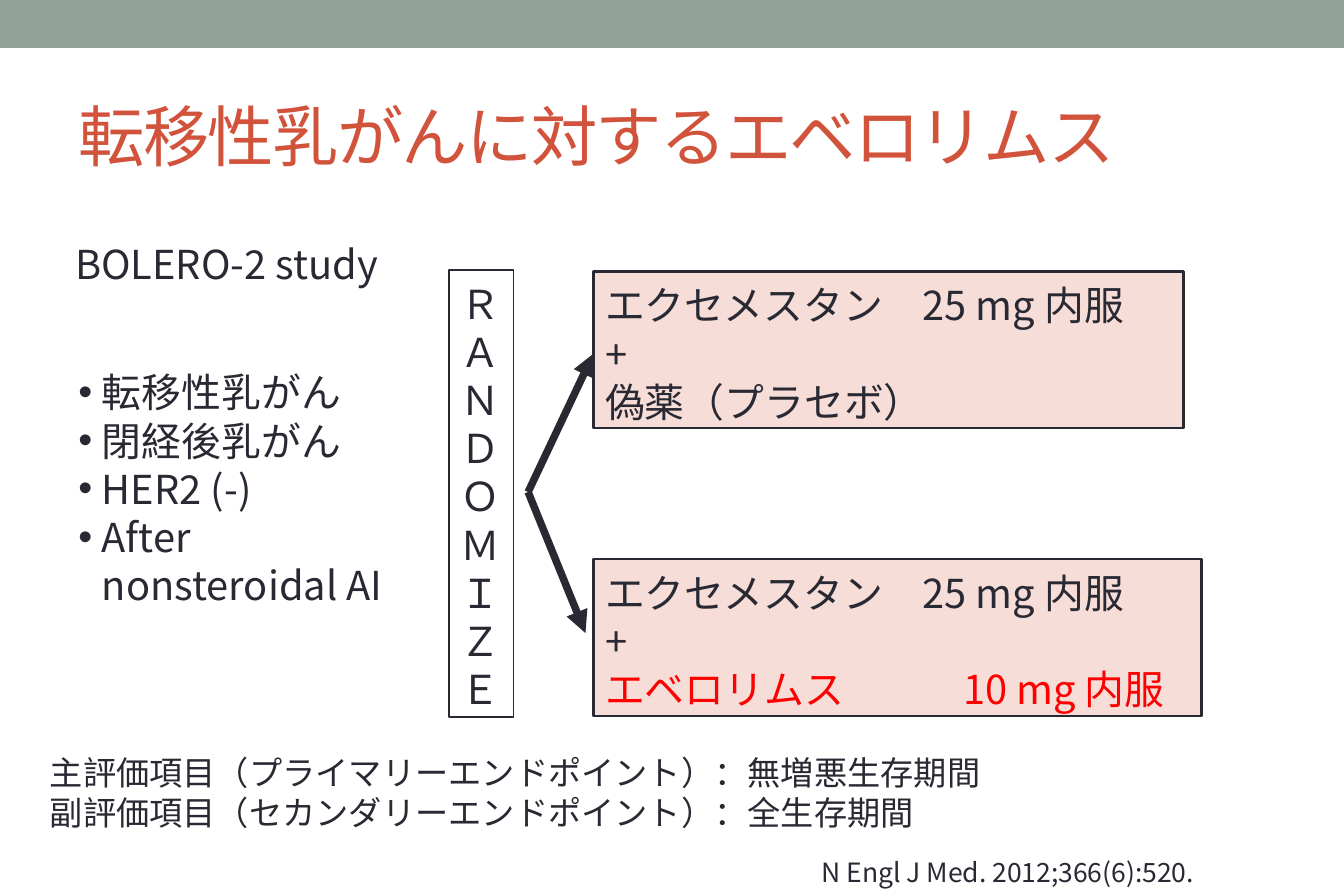
from lxml import etree
from pptx import Presentation
from pptx import util as u
from pptx.dml.color import RGBColor
from pptx.enum import shapes, text
from pptx.oxml.ns import qn

FONT = "Noto Sans CJK JP"
COLORS = {
    "band": "93A299",
    "title": "D2533C",
    "ink": "292934",
    "arm": "F6DDD8",
    "drug": "FF0000",
}


def color(name):
    return RGBColor.from_string(COLORS[name])


def write(shape, lines, size, ink="ink", wrap=True, bullet=False, tab=None):
    frame = shape.text_frame
    frame.word_wrap = wrap
    frame.vertical_anchor = text.MSO_ANCHOR.TOP
    frame.margin_top = u.Cm(0.2)
    for index, line in enumerate(lines):
        paragraph = frame.add_paragraph() if index else frame.paragraphs[0]
        paragraph.text = line
        paragraph.alignment = text.PP_ALIGN.LEFT
        paragraph.line_spacing = u.Pt(round(size * 1.2))
        properties = paragraph._p.get_or_add_pPr()
        if bullet:
            properties.set("marL", str(u.Cm(0.5)))
            properties.set("indent", str(u.Cm(-0.5)))
            etree.SubElement(properties, qn("a:buFont"), typeface="Arial")
            etree.SubElement(properties, qn("a:buChar"), char="•")
        if tab:
            stops = etree.SubElement(properties, qn("a:tabLst"))
            etree.SubElement(stops, qn("a:tab"), pos=str(u.Cm(tab)), algn="l")
        font = paragraph.font
        font.size = u.Pt(size)
        font.name = FONT
        font.color.rgb = color(ink)
        etree.SubElement(properties.find(qn("a:defRPr")), qn("a:ea"), typeface=FONT)
    return frame


presentation = Presentation()
presentation.slide_width = u.Cm(28.58)
presentation.slide_height = u.Cm(19.05)
slide = presentation.slides.add_slide(presentation.slide_layouts[5])

band = slide.shapes.add_shape(shapes.MSO_SHAPE.RECTANGLE, 0, 0, presentation.slide_width, u.Cm(1.02))
band.shadow.inherit = False
band.fill.solid()
band.fill.fore_color.rgb = color("band")
band.line.fill.background()

title = slide.shapes.title
title.left, title.top, title.width, title.height = u.Cm(1.42), u.Cm(1.47), u.Cm(25.7), u.Cm(2.74)
title_frame = write(title, ["転移性乳がんに対するエベロリムス"], 40, "title")
title_frame.vertical_anchor = text.MSO_ANCHOR.MIDDLE
title_frame.paragraphs[0].runs[0]._r.get_or_add_rPr().set("spc", "-100")

labels = [
    (17.22, 18.01, 10.16, 0.94, 16, False, False, ["N Engl J Med. 2012;366(6):520."]),
    (1.42, 7.62, 7.49, 5.38, 24, True, True,
     ["転移性乳がん", "閉経後乳がん", "HER2 (-)", "After nonsteroidal AI"]),
    (0.81, 15.8, 22.23, 1.96, 20, True, False,
     ["主評価項目（プライマリーエンドポイント）：無増悪生存期間",
      "副評価項目（セカンダリーエンドポイント）：全生存期間"]),
    (1.35, 4.88, 8.08, 1.27, 24, False, False, ["BOLERO-2 study"]),
]
for left, top, width, height, size, wrap, bullet, lines in labels:
    label = slide.shapes.add_textbox(u.Cm(left), u.Cm(top), u.Cm(width), u.Cm(height))
    write(label, lines, size, wrap=wrap, bullet=bullet)

for end_x, end_y in [(12.45, 13.46), (12.62, 7.52)]:
    arrow = slide.shapes.add_connector(
        shapes.MSO_CONNECTOR.STRAIGHT, u.Cm(11.23), u.Cm(10.46), u.Cm(end_x), u.Cm(end_y))
    arrow.line.color.rgb = color("ink")
    arrow.line.width = u.Pt(4.5)
    etree.SubElement(arrow.line._get_or_add_ln(), qn("a:tailEnd"), type="triangle")
    etree.SubElement(arrow._element.spPr, qn("a:effectLst"))

exemestane = "エクセメスタン\u300025 mg 内服".replace("\u3000", "　")
boxes = [
    (9.55, 5.74, 1.37, 9.5, 1, None, False, list("ＲＡＮＤＯＭＩＺＥ")),
    (12.62, 5.77, 12.55, 3.33, 1.5, "arm", True, [exemestane, "+", "偽薬（プラセボ）"]),
    (12.62, 11.89, 12.93, 3.33, 1.5, "arm", True, [exemestane, "+", "エベロリムス \t10 mg 内服"]),
]
for left, top, width, height, weight, fill, wrap, lines in boxes:
    box = slide.shapes.add_shape(
        shapes.MSO_SHAPE.RECTANGLE, u.Cm(left), u.Cm(top), u.Cm(width), u.Cm(height))
    box.shadow.inherit = False
    if fill:
        box.fill.solid()
        box.fill.fore_color.rgb = color(fill)
    else:
        box.fill.background()
    box.line.color.rgb = color("ink")
    box.line.width = u.Pt(weight)
    frame = write(box, lines, 24, wrap=wrap, tab=7.62 if fill else None)
frame.paragraphs[-1].font.color.rgb = color("drug")

presentation.save("out.pptx")
